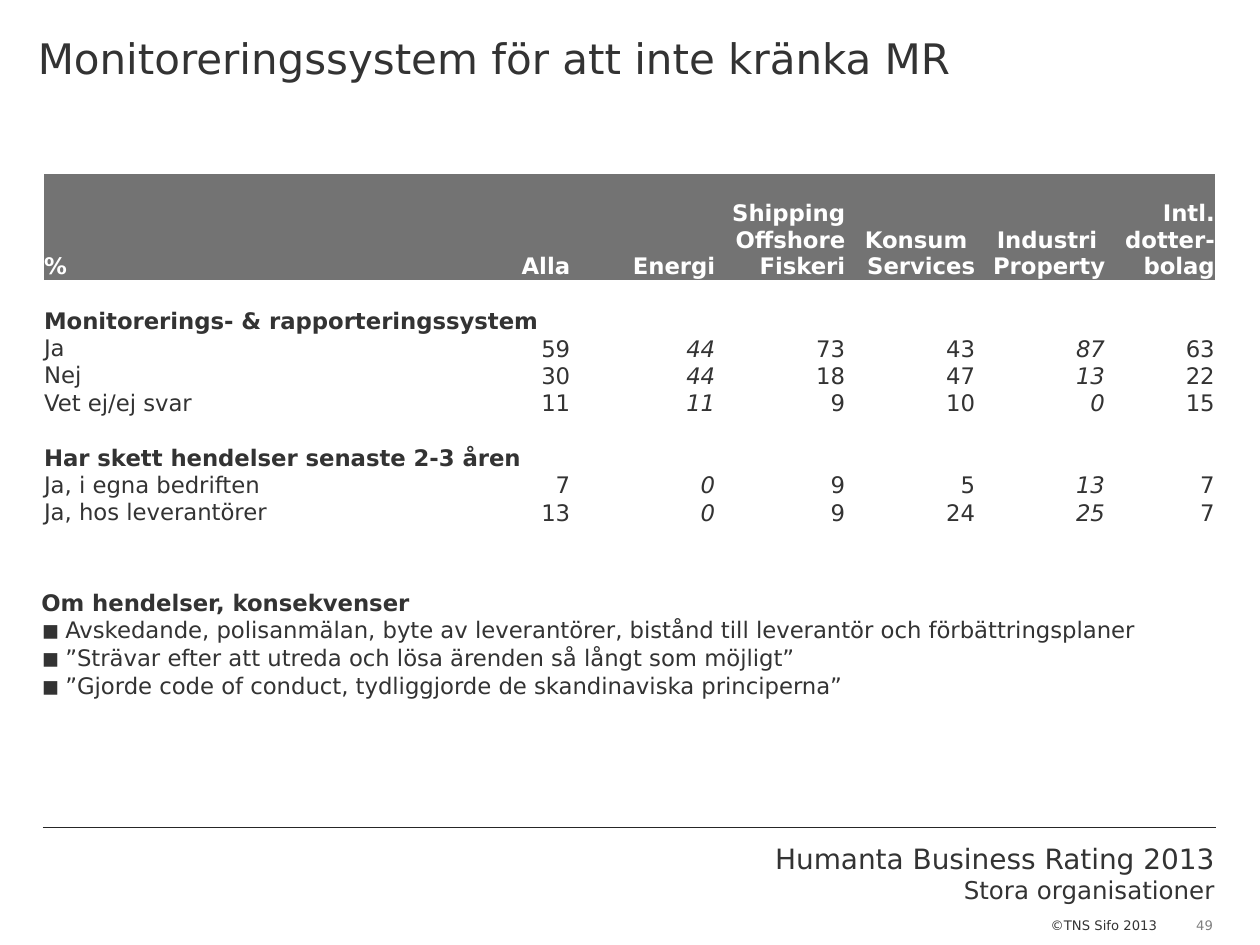
from dataclasses import dataclass

from lxml import etree
from pptx import Presentation
from pptx import util as u
from pptx.dml.color import RGBColor
from pptx.enum import shapes, text
from pptx.oxml.ns import qn


@dataclass(frozen=True)
class Theme:
    face: str = "DejaVu Sans"
    ink: str = "333333"
    rule: str = "262626"
    muted: str = "808080"
    band: str = "737373"
    paper: str = "FFFFFF"
    title: float = 24
    brand: float = 16
    subject: float = 14
    body: float = 13
    small: float = 7.5
    plain_table: str = "{2D5ABB26-0587-4C30-8999-92F81FD0307C}"


THEME = Theme()
LEFT, CENTER, RIGHT = (text.PP_ALIGN.LEFT, text.PP_ALIGN.CENTER,
                       text.PP_ALIGN.RIGHT)


@dataclass(frozen=True)
class Box:
    left: float
    top: float
    width: float
    height: float

    def share(self, x, y, w, h):
        """Box at the given shares of this one."""
        return Box(self.left + x * self.width, self.top + y * self.height,
                   w * self.width, h * self.height)

    def lengths(self):
        return [round(v) for v in (self.left, self.top, self.width, self.height)]


def apply(target, formats):
    for name, value in formats.items():
        setattr(target, name, value)


def write(paragraph, words, size=THEME.body, color=THEME.ink, bold=False,
          italic=False, **layout):
    apply(paragraph, layout)
    run = paragraph.add_run()
    run.text = words
    apply(run.font, {"name": THEME.face, "size": u.Pt(size), "bold": bold,
                     "italic": italic})
    run.font.color.rgb = RGBColor.from_string(color)


def paragraphs(frame, count):
    return [frame.paragraphs[0]] + [frame.add_paragraph() for _ in range(count - 1)]


def text_frame(slide, box, **formats):
    frame = slide.shapes.add_textbox(*box.lengths()).text_frame
    apply(frame, {"word_wrap": True, **formats})
    return frame


def add_title(slide, box):
    margin = u.Inches(0.3)
    frame = text_frame(slide, box, margin_left=margin, margin_right=margin,
                       margin_top=u.Inches(0.26), margin_bottom=0)
    write(frame.paragraphs[0], "Monitoreringssystem för att inte kränka MR",
          THEME.title)


# Survey table
COLUMN_WEIGHTS = [3.7, 0.47, 1.15, 1.03, 1.03, 1.03, 0.87]
HEADER_SHARE = 0.3
ITALIC_COLUMNS = {2, 5}
HEADINGS = [["%"], ["Alla"], ["Energi"], ["Shipping", "Offshore", "Fiskeri"],
            ["Konsum ", "Services"], ["Industri ", "Property"],
            ["Intl.", "dotter-", "bolag"]]
# (section heading, columns it spans, answers)
SECTIONS = [
    ("Monitorerings- & rapporteringssystem", 4, [
        ("Ja", 59, 44, 73, 43, 87, 63),
        ("Nej", 30, 44, 18, 47, 13, 22),
        ("Vet ej/ej svar", 11, 11, 9, 10, 0, 15)]),
    ("Har skett hendelser senaste 2-3 åren", 3, [
        ("Ja, i egna bedriften", 7, 0, 9, 5, 13, 7),
        ("Ja, hos leverantörer", 13, 0, 9, 24, 25, 7)]),
]


def add_survey_table(slide, box):
    body_rows = sum(2 + len(answers) for _, _, answers in SECTIONS)
    frame = slide.shapes.add_table(body_rows + 1, len(HEADINGS), *box.lengths())
    table = frame.table
    apply(table, {"first_row": False, "horz_banding": False})
    next(frame._element.iter(qn("a:tableStyleId"))).text = THEME.plain_table

    # Grid
    for column, weight in zip(table.columns, COLUMN_WEIGHTS):
        column.width = round(box.width * weight / sum(COLUMN_WEIGHTS))
    for row in table.rows:
        row.height = round(box.height * (1 - HEADER_SHARE) / body_rows)
    table.rows[0].height = round(box.height * HEADER_SHARE)
    for cell in table.iter_cells():
        apply(cell, {"margin_left": 0, "margin_right": 0, "margin_top": 0,
                     "margin_bottom": 0,
                     "vertical_anchor": text.MSO_ANCHOR.BOTTOM})
        cell.fill.background()

    # Header
    for col, lines in enumerate(HEADINGS):
        cell = table.cell(0, col)
        cell.fill.solid()
        cell.fill.fore_color.rgb = RGBColor.from_string(THEME.band)
        for paragraph, line in zip(paragraphs(cell.text_frame, len(lines)), lines):
            write(paragraph, line, color=THEME.paper, bold=True,
                  alignment=RIGHT if col else LEFT)

    # Sections, each after one empty row
    row = 2
    for heading, span, answers in SECTIONS:
        table.cell(row, 0).merge(table.cell(row, span - 1))
        write(table.cell(row, 0).text_frame.paragraphs[0], heading, bold=True)
        for row, (label, *values) in enumerate(answers, row + 1):
            write(table.cell(row, 0).text_frame.paragraphs[0], label)
            for col, value in enumerate(values, 1):
                write(table.cell(row, col).text_frame.paragraphs[0], str(value),
                      italic=col in ITALIC_COLUMNS, alignment=RIGHT,
                      line_spacing=0.9)
        row += 2

    # Empty cells keep the body size, so their rows stay low
    for cell in table.iter_cells():
        if not cell.text_frame.text:
            end = etree.SubElement(cell.text_frame.paragraphs[0]._p,
                                   qn("a:endParaRPr"), sz=str(THEME.body * 100))
            etree.SubElement(end, qn("a:latin"), typeface=THEME.face)


CONSEQUENCES = [
    "Avskedande, polisanmälan, byte av leverantörer, bistånd till leverantör"
    " och förbättringsplaner",
    "”Strävar efter att utreda och lösa ärenden så långt som möjligt”",
    "”Gjorde code of conduct, tydliggjorde de skandinaviska principerna”",
]


def add_bullet(paragraph):
    indent = u.Inches(0.19)
    properties = paragraph._p.get_or_add_pPr()
    for name, value in {"marL": indent, "indent": -indent}.items():
        properties.set(name, str(value))
    color = etree.SubElement(properties, qn("a:buClr"))
    etree.SubElement(color, qn("a:srgbClr"), val=THEME.ink)
    etree.SubElement(properties, qn("a:buSzPct"), val="120000")
    etree.SubElement(properties, qn("a:buFont"), typeface=THEME.face)
    etree.SubElement(properties, qn("a:buChar"), char="▪")


def add_consequences(slide, box):
    heading, *items = paragraphs(text_frame(slide, box), 1 + len(CONSEQUENCES))
    write(heading, "Om hendelser, konsekvenser", bold=True)
    for paragraph, words in zip(items, CONSEQUENCES):
        add_bullet(paragraph)
        write(paragraph, words, space_before=u.Pt(0.3))


def add_footer(slide, box):
    # Rule
    left, top, width, _ = box.share(0.034, 0, 0.931, 0).lengths()
    rule = slide.shapes.add_connector(shapes.MSO_CONNECTOR.STRAIGHT,
                                      left, top, left + width, top)
    rule.line.color.rgb = RGBColor.from_string(THEME.rule)
    rule.line.width = u.Pt(0.75)
    etree.SubElement(rule._element.spPr, qn("a:effectLst"))

    # Survey name
    name = text_frame(slide, box.share(0.516, 0.065, 0.458, 0.66))
    brand, subject = paragraphs(name, 2)
    write(brand, "Humanta Business Rating 2013", THEME.brand, alignment=RIGHT)
    write(subject, "Stora organisationer", THEME.subject, alignment=RIGHT)

    # Copyright and page number
    rights = text_frame(slide, box.share(0.824, 0.71, 0.11, 0.25))
    write(rights.paragraphs[0], "©TNS Sifo 2013", THEME.small)
    page = text_frame(slide, box.share(0.947, 0.76, 0.018, 0.14),
                      word_wrap=False, margin_left=0, margin_right=0,
                      margin_top=0, margin_bottom=0)
    write(page.paragraphs[0], "49", THEME.small, THEME.muted, alignment=CENTER)


def main():
    deck = Presentation()
    apply(deck, {"slide_width": u.Inches(10), "slide_height": u.Inches(7.5)})
    slide = deck.slides.add_slide(deck.slide_layouts[6])
    page = Box(0, 0, deck.slide_width, deck.slide_height)
    add_title(slide, page.share(0, 0, 1, 0.155))
    add_survey_table(slide, page.share(0.035, 0.184, 0.929, 0.373))
    add_consequences(slide, page.share(0.023, 0.616, 0.941, 0.161))
    add_footer(slide, page.share(0, 0.876, 1, 0.124))
    deck.save("out.pptx")


if __name__ == "__main__":
    main()
